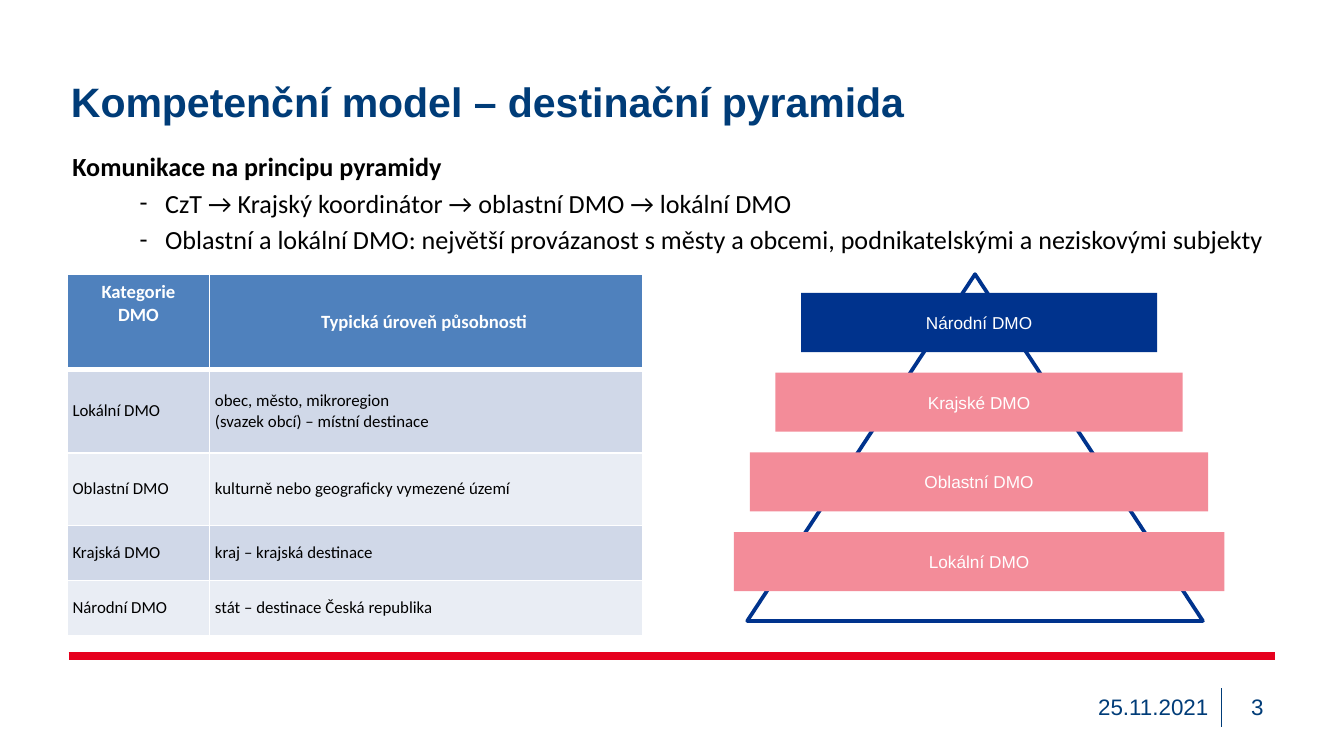
from lxml.etree import SubElement
from pptx import Presentation
from pptx.dml.color import RGBColor
from pptx.enum.shapes import MSO_CONNECTOR, MSO_SHAPE
from pptx.enum.text import MSO_ANCHOR, PP_ALIGN
from pptx.oxml import parse_xml
from pptx.oxml.ns import nsdecls, qn
from pptx.util import Inches, Pt

HUES = {
    "navy": "003C78", "blue": "00338D", "pink": "F38C99", "red": "E6001E",
    "head": "4F81BD", "odd": "D0D8E8", "even": "E9EDF4",
    "white": "FFFFFF", "black": "000000",
}
TITLE = {"name": "Arial", "size": Pt(22), "bold": True}
FOOT = {"name": "Arial", "size": Pt(12)}
BAR = {"name": "Arial", "size": Pt(9.2)}
LEAD = {"name": "Calibri", "size": Pt(14), "bold": True}
ITEM = {**LEAD, "bold": False}
HEAD = {"name": "Calibri", "size": Pt(10), "bold": True}
CELL = {"name": "Calibri", "size": Pt(9), "bold": False}

ROWS = [
    ("Kategorie DMO", "Typická úroveň působnosti "),
    ("Lokální DMO", "obec, město, mikroregion\n(svazek obcí) – místní destinace"),
    ("Oblastní DMO", "kulturně nebo geograficky vymezené území"),
    ("Krajská DMO", "kraj – krajská destinace"),
    ("Národní DMO", "stát – destinace Česká republika"),
]
BARS = [
    ("Národní DMO", 2.65, "blue"),
    ("Krajské DMO", 3.03, "pink"),
    ("Oblastní DMO", 3.41, "pink"),
    ("Lokální DMO", 3.65, "pink"),
]
ITEMS = [
    "CzT → Krajský koordinátor → oblastní DMO → lokální DMO",
    "Oblastní a lokální DMO: největší provázanost s městy a obcemi, "
    "podnikatelskými a neziskovými subjekty",
]


def rgb(hue):
    return RGBColor.from_string(HUES[hue])


def style(para, look, hue, align=PP_ALIGN.LEFT):
    para.alignment = align
    for run in para.runs:
        for key, value in look.items():
            setattr(run.font, key, value)
        run.font.color.rgb = rgb(hue)


def write(frame, text, look, hue, align=PP_ALIGN.LEFT, anchor=MSO_ANCHOR.MIDDLE):
    frame.word_wrap = True
    frame.vertical_anchor = anchor
    for i, line in enumerate(text.split("\n")):
        para = frame.add_paragraph() if i else frame.paragraphs[0]
        para.text = line
        style(para, look, hue, align)


def add_text(slide, box, *args, **opts):
    frame = slide.shapes.add_textbox(*map(Inches, box)).text_frame
    write(frame, *args, **opts)
    return frame


def add_line(slide, ends, hue, width):
    line = slide.shapes.add_connector(MSO_CONNECTOR.STRAIGHT, *map(Inches, ends))
    line.line.color.rgb = rgb(hue)
    line.line.width = Pt(width)
    SubElement(line._element.spPr, qn("a:effectLst"))


def add_shape(slide, kind, box, fill):
    shape = slide.shapes.add_shape(kind, *map(Inches, box))
    shape.shadow.inherit = False
    shape.fill.solid()
    shape.fill.fore_color.rgb = rgb(fill)
    shape.line.fill.background()
    return shape


def add_intro(slide, box):
    frame = add_text(slide, box, "Komunikace na principu pyramidy", LEAD, "black",
                     anchor=MSO_ANCHOR.TOP)
    for text in ITEMS:
        para = frame.add_paragraph()
        para.text = text
        props = para._p.get_or_add_pPr()
        props.set("marL", str(Inches(0.69)))
        props.set("indent", str(Inches(-0.19)))
        SubElement(props, qn("a:buFont")).set("typeface", "Calibri")
        SubElement(props, qn("a:buChar")).set("char", "-")
        para.level = 1
        para.space_before = Pt(2.8)
        style(para, ITEM, "black")


def set_edges(cell, widths):
    """Draw white borders; widths maps each side to points."""
    props = cell._tc.get_or_add_tcPr()
    for i, (side, width) in enumerate(widths.items()):
        props.insert(i, parse_xml(
            f'<a:ln{side} {nsdecls("a")} w="{Pt(width)}"><a:solidFill>'
            f'<a:srgbClr val="{HUES["white"]}"/></a:solidFill></a:ln{side}>'))


def add_levels(slide, box):
    table = slide.shapes.add_table(len(ROWS), 2, *map(Inches, box)).table
    for col, width in zip(table.columns, (1.06, 3.22)):
        col.width = Inches(width)
    for r, (texts, tall) in enumerate(zip(ROWS, (0.71, 0.62, 0.54, 0.41, 0.41))):
        table.rows[r].height = Inches(tall)
        for c, text in enumerate(texts):
            cell = table.cell(r, c)
            pads = (0.04, 0.04) if r else (0.09, 0.05)
            for side, pad in zip(("left", "top", "right", "bottom"), pads * 2):
                setattr(cell, f"margin_{side}", Inches(pad))
            if r:
                fill = "odd" if r % 2 else "even"
                write(cell.text_frame, text, CELL, "black")
            else:
                fill = "head"
                write(cell.text_frame, text, HEAD, "white", PP_ALIGN.CENTER)
            cell.vertical_anchor = MSO_ANCHOR.MIDDLE if r or c else MSO_ANCHOR.TOP
            cell.fill.solid()
            cell.fill.fore_color.rgb = rgb(fill)
            set_edges(cell, {"L": 1, "R": 1, "T": 3 if r == 1 else 1,
                             "B": 1 if r else 3})


def add_pyramid(slide, box):
    left, top, width, height = box
    peak = add_shape(slide, MSO_SHAPE.ISOSCELES_TRIANGLE,
                     (left + 0.1, top, width - 0.26, height), "white")
    peak.line.color.rgb = rgb("blue")
    peak.line.width = Pt(2)
    for i, (text, wide, fill) in enumerate(BARS):
        place = (left + (width - wide) / 2, top + 0.14 + i * 0.593, wide, 0.44)
        bar = add_shape(slide, MSO_SHAPE.RECTANGLE, place, fill)
        write(bar.text_frame, text, BAR, "white", PP_ALIGN.CENTER)


def add_footer(slide, box):
    left, top, width, height = box
    split = left + width - 0.41
    add_line(slide, (0.51, 4.88, 9.49, 4.88), "red", 4.5)
    add_text(slide, (left, top, split - left, height), "25.11.2021", FOOT, "navy",
             PP_ALIGN.RIGHT)
    add_text(slide, (split, top, 0.41, height), "3", FOOT, "navy", PP_ALIGN.RIGHT)
    add_line(slide, (split, top + 0.01, split, top + height), "navy", 0.75)


def main():
    deck = Presentation()
    deck.slide_width = Inches(10)
    deck.slide_height = deck.slide_width * 9 // 16
    slide = deck.slides.add_slide(deck.slide_layouts[6])
    add_footer(slide, (6.5, 5.11, 3, 0.3))
    add_text(slide, (0.43, 0.28, 9.13, 0.94),
             "Kompetenční model – destinační pyramida", TITLE, "navy")
    add_pyramid(slide, (5.46, 2.04, 3.65, 2.58))
    add_levels(slide, (0.5, 2.04, 4.28, 2.69))
    add_intro(slide, (0.44, 1.07, 9.43, 0.9))
    deck.save("out.pptx")


if __name__ == "__main__":
    main()
